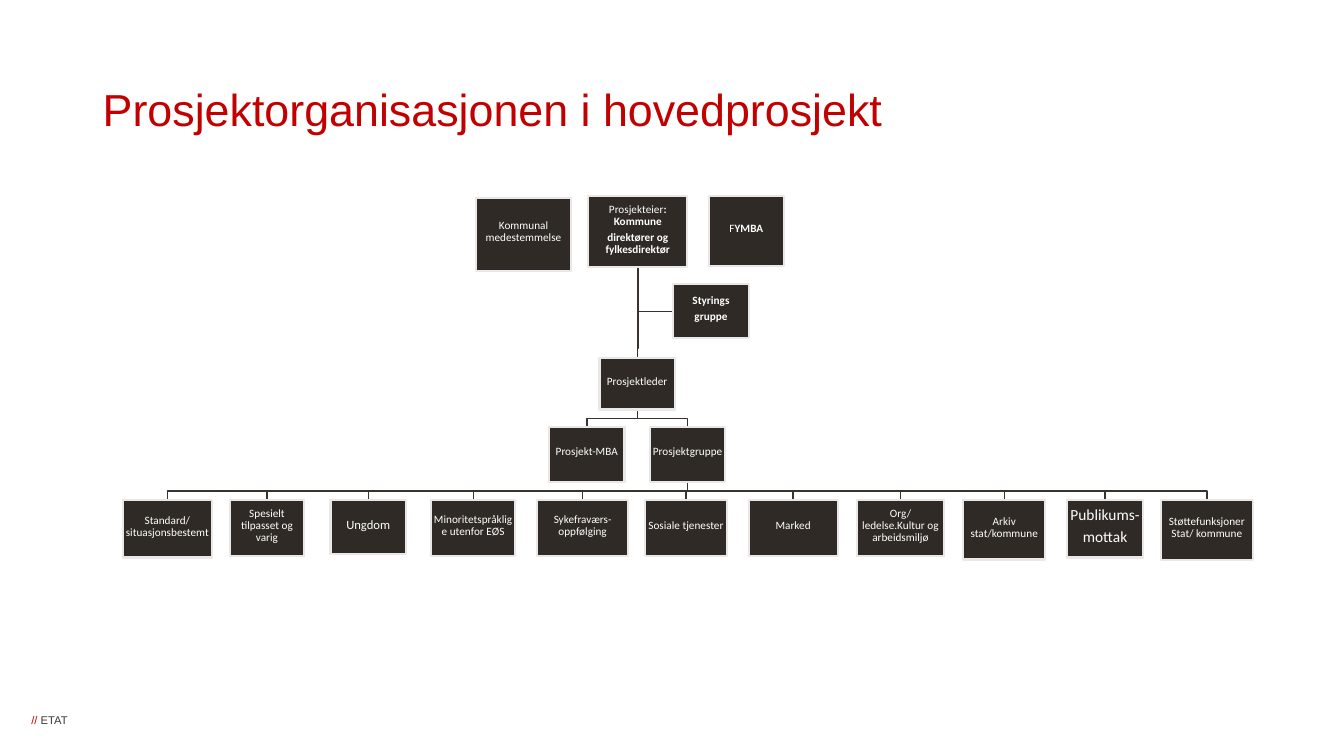
import dataclasses

import pptx
import pptx.dml.color
import pptx.enum.shapes
import pptx.enum.text
import pptx.util

Cm = pptx.util.Cm
Pt = pptx.util.Pt
ALIGN = pptx.enum.text.PP_ALIGN
ANCHOR = pptx.enum.text.MSO_ANCHOR


@dataclasses.dataclass(frozen=True)
class Theme:
    red: str = "C30000"
    footer_grey: str = "3E3832"
    box_fill: str = "2F2A25"
    box_line: str = "E9E7E7"
    connector: str = "38332D"
    white: str = "FFFFFF"
    heading_font: str = "Arial"
    chart_font: str = "Calibri"
    title_size: float = 32
    footer_size: float = 8
    box_size: float = 8
    medium_size: float = 9
    large_size: float = 11


THEME = Theme()
BUS_RISE = 0.23
TEAM_TOP = 7.65

LEADERS = {
    "medestemmelse": (8.89, 0.03, 2.41, 1.85, [[("Kommunal medestemmelse", False)]]),
    "eier": (11.73, 0, 2.49, 1.78, [
        [("Prosjekteier", False), (": Kommune", True)],
        [("direktører og fylkesdirektør", True)],
    ]),
    "fymba": (14.76, 0, 1.9, 1.75, [[("F", False), ("YMBA", True)]]),
    "styringsgruppe": (13.87, 2.21, 1.9, 1.37, [[("Styrings", True)], [("gruppe", True)]]),
    "leder": (12.01, 4.07, 1.9, 1.3, [[("Prosjektleder", False)]]),
    "mba": (10.74, 5.82, 1.9, 1.37, [[("Prosjekt-MBA", False)]]),
    "gruppe": (13.28, 5.82, 1.9, 1.37, [[("Prosjektgruppe", False)]]),
}

TEAMS = [
    (0, 2.24, 1.45, ["Standard/ situasjonsbestemt"], THEME.box_size),
    (2.69, 1.88, 1.42, ["Spesielt tilpasset og varig"], THEME.box_size),
    (5.23, 1.9, 1.37, ["Ungdom"], THEME.medium_size),
    (7.77, 2.11, 1.42, ["Minoritetspråklige utenfor EØS"], THEME.box_size),
    (10.44, 2.29, 1.42, ["Sykefraværs-oppfølging"], THEME.box_size),
    (13.16, 2.06, 1.42, ["Sosiale tjenester"], THEME.box_size),
    (15.77, 2.24, 1.42, ["Marked"], THEME.box_size),
    (18.49, 2.21, 1.42, ["Org/ ledelse.Kultur og arbeidsmiljø"], THEME.box_size),
    (21.18, 2.06, 1.5, ["Arkiv stat/kommune"], THEME.box_size),
    (23.8, 1.9, 1.45, ["Publikums-", "mottak"], THEME.large_size),
    (26.16, 2.31, 1.52, ["Støttefunksjoner Stat/ kommune"], THEME.box_size),
]


def rgb(value):
    return pptx.dml.color.RGBColor.from_string(value)


def set_attrs(obj, **values):
    for name, value in values.items():
        setattr(obj, name, value)


def set_margins(tf, left, top, right, bottom):
    set_attrs(tf, margin_left=Cm(left), margin_top=Cm(top),
              margin_right=Cm(right), margin_bottom=Cm(bottom))


def add_run(p, text, font, size, color, bold=False):
    r = p.add_run()
    r.text = text
    set_attrs(r.font, name=font, size=Pt(size), bold=bold)
    r.font.color.rgb = rgb(color)


def add_title(s, left, top, width, height):
    tf = s.shapes.add_textbox(Cm(left), Cm(top), Cm(width), Cm(height)).text_frame
    set_attrs(tf, word_wrap=True, vertical_anchor=ANCHOR.MIDDLE)
    p = tf.paragraphs[0]
    p.line_spacing = 0.9
    add_run(p, "Prosjektorganisasjonen i hovedprosjekt",
            THEME.heading_font, THEME.title_size, THEME.red)


def add_footer(s, left, top, width, height):
    tf = s.shapes.add_textbox(Cm(left), Cm(top), Cm(width), Cm(height)).text_frame
    set_margins(tf, 0, 0, 0, 0)
    tf.word_wrap = False
    p = tf.paragraphs[0]
    for text, color in (("// ", THEME.red), ("ETAT", THEME.footer_grey)):
        add_run(p, text, THEME.heading_font, THEME.footer_size, color)


def add_box(s, box, paragraphs, size):
    sp = s.shapes.add_shape(pptx.enum.shapes.MSO_SHAPE.RECTANGLE, *map(Cm, box))
    sp.shadow.inherit = False
    sp.fill.solid()
    sp.fill.fore_color.rgb = rgb(THEME.box_fill)
    sp.line.color.rgb = rgb(THEME.box_line)
    sp.line.width = Pt(1.5)
    tf = sp.text_frame
    set_attrs(tf, word_wrap=True, vertical_anchor=ANCHOR.MIDDLE)
    set_margins(tf, 0.02, 0.02, 0.02, 0.13)
    for i, runs in enumerate(paragraphs):
        p = tf.add_paragraph() if i else tf.paragraphs[0]
        set_attrs(p, alignment=ALIGN.CENTER, line_spacing=0.9, space_after=Pt(size * 0.35))
        for text, bold in runs:
            add_run(p, text, THEME.chart_font, size, THEME.white, bold)


def add_path(s, points):
    start, *rest = [(Cm(x), Cm(y)) for x, y in points]
    builder = s.shapes.build_freeform(*start, scale=1.0)
    builder.add_line_segments(rest, close=False)
    sp = builder.convert_to_shape()
    sp.shadow.inherit = False
    sp.fill.background()
    sp.line.color.rgb = rgb(THEME.connector)
    sp.line.width = Pt(1)


def bottom_center(box):
    left, top, width, height = box
    return left + width / 2, top + height


def connect_down(s, parent, child):
    x0, y0 = bottom_center(parent)
    x1, y1 = child[0] + child[2] / 2, child[1]
    bus = y1 - BUS_RISE
    add_path(s, [(x0, y0), (x0, bus), (x1, bus), (x1, y1)])


def connect_aside(s, parent, child):
    x, y = bottom_center(parent)
    middle = child[1] + child[3] / 2
    add_path(s, [(x, y), (x, middle), (child[0], middle)])


def add_org_chart(s, left, top):
    leaders = {name: (left + x, top + y, w, h)
               for name, (x, y, w, h, _) in LEADERS.items()}
    teams = [(left + x, top + TEAM_TOP, w, h) for x, w, h, _, _ in TEAMS]

    connect_aside(s, leaders["eier"], leaders["styringsgruppe"])
    for parent, child in (("eier", "leder"), ("leder", "mba"), ("leder", "gruppe")):
        connect_down(s, leaders[parent], leaders[child])
    for team in teams:
        connect_down(s, leaders["gruppe"], team)

    for name, box in leaders.items():
        add_box(s, box, LEADERS[name][4], THEME.box_size)
    for box, (_, _, _, lines, size) in zip(teams, TEAMS):
        add_box(s, box, [[(line, False)] for line in lines], size)


def main():
    prs = pptx.Presentation()
    set_attrs(prs, slide_width=Cm(33.87), slide_height=Cm(19.05))
    s = prs.slides.add_slide(prs.slide_layouts[6])
    add_title(s, 2.34, 1.35, 29.21, 2.97)
    add_org_chart(s, 3.1, 4.95)
    add_footer(s, 0.79, 17.98, 1, 0.33)
    prs.save("out.pptx")


if __name__ == "__main__":
    main()
